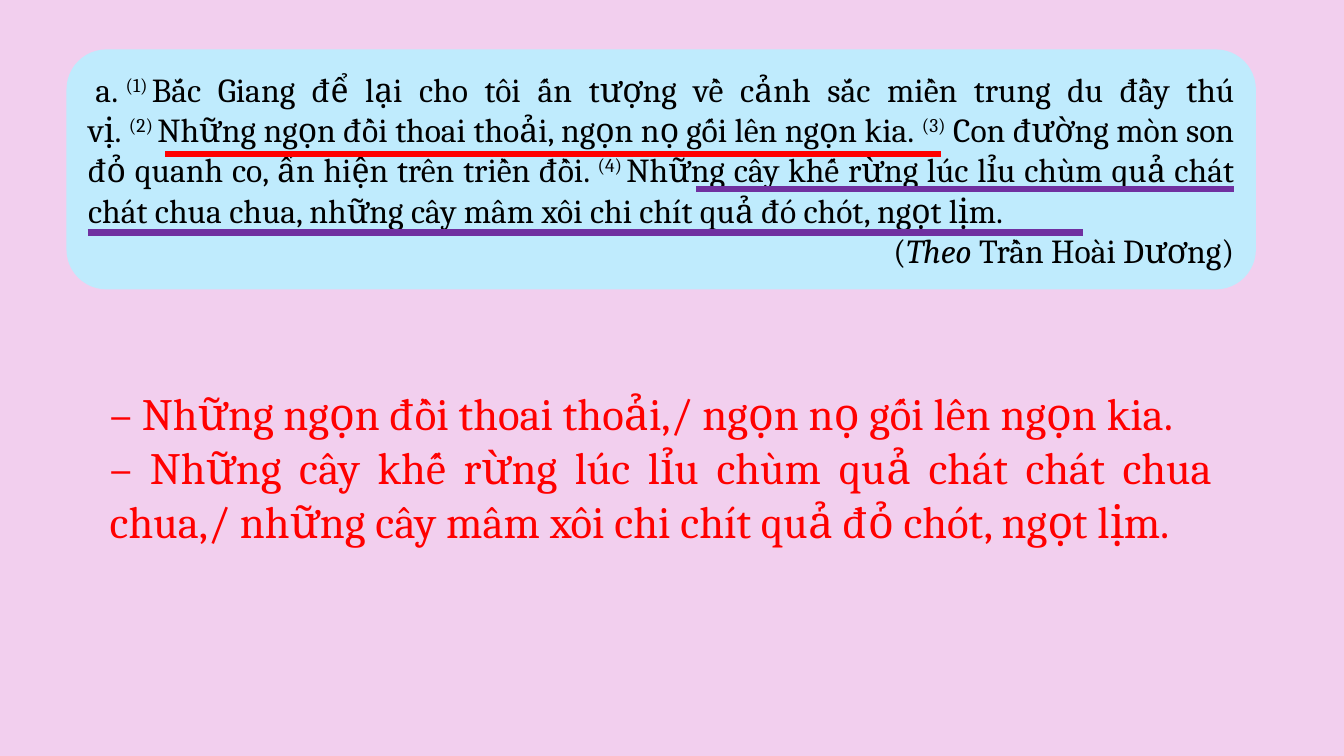
from pptx import Presentation
from pptx.dml.color import RGBColor
from pptx.enum.shapes import MSO_CONNECTOR, MSO_SHAPE
from pptx.enum.text import MSO_ANCHOR, MSO_AUTO_SIZE, PP_ALIGN
from pptx.oxml.ns import qn
from pptx.util import Pt
from lxml import etree

PINK = RGBColor(0xF2, 0xCF, 0xEE)
LIGHT_BLUE = RGBColor(0xBF, 0xEB, 0xFD)
BLACK = RGBColor(0, 0, 0)
RED = RGBColor(0xFF, 0, 0)
PURPLE = RGBColor(0x70, 0x30, 0xA0)

PASSAGE_FORMAT = {"name": "Cambria", "size": Pt(24)}
ANSWER_FORMAT = {"name": "Cambria", "size": Pt(32)}

HARD_SPACE = chr(160)

PASSAGE = [
    (PP_ALIGN.JUSTIFY, [
        (f"{HARD_SPACE}a.{HARD_SPACE}", ""),
        (f"(1){HARD_SPACE}", "superscript"),
        ("Bắc Giang để lại cho tôi ấn tượng về cảnh sắc miền trung du "
         f"đầy thú vị.{HARD_SPACE}", ""),
        (f"(2){HARD_SPACE}", "superscript"),
        (f"Những ngọn đồi thoai thoải, ngọn nọ gối lên ngọn kia.{HARD_SPACE}", ""),
        ("(3)", "superscript"),
        (f"{HARD_SPACE}Con đường mòn son đỏ quanh co, "
         f"ẩn hiện trên triền đồi.{HARD_SPACE}", ""),
        (f"(4){HARD_SPACE}", "superscript"),
        ("Những cây khế rừng lúc lỉu chùm quả chát chát chua chua, "
         "những cây mâm xôi chi chít quả đó chót, ngọt lịm.", ""),
    ]),
    (PP_ALIGN.RIGHT, [
        ("(", ""),
        ("Theo", "italic"),
        (f"{HARD_SPACE}Trần Hoài Dương)", ""),
    ]),
]

ANSWERS = [
    (PP_ALIGN.JUSTIFY, [
        ("– Những ngọn đồi thoai thoải,/ ngọn nọ gối lên ngọn kia.", ""),
    ]),
    (PP_ALIGN.JUSTIFY, [
        ("– Những cây khế rừng lúc lỉu chùm quả chát chát chua chua,/ "
         "những cây mâm xôi chi chít quả đỏ chót, ngọt lịm.", ""),
    ]),
]

UNDERLINES = [
    (118.1, 672.5, 110.2, RED),
    (497.5, 881.3, 135.2, PURPLE),
    (62.6, 773.3, 166.1, PURPLE),
]


def write_paragraphs(text_frame, paragraphs, font_format, color):
    text_frame.word_wrap = True
    for index, (alignment, runs) in enumerate(paragraphs):
        paragraph = text_frame.add_paragraph() if index else text_frame.paragraphs[0]
        paragraph.alignment = alignment
        for text, style in runs:
            run = paragraph.add_run()
            run.text = text
            for attribute, value in font_format.items():
                setattr(run.font, attribute, value)
            run.font.color.rgb = color
            if style == "italic":
                run.font.italic = True
            elif style == "superscript":
                run._r.get_or_add_rPr().set("baseline", "30000")


def add_passage(slide):
    shape = slide.shapes.add_shape(
        MSO_SHAPE.ROUNDED_RECTANGLE, Pt(47.5), Pt(35.3), Pt(849.6), Pt(171.4))
    shape.shadow.inherit = False
    shape.fill.solid()
    shape.fill.fore_color.rgb = LIGHT_BLUE
    shape.line.fill.background()
    shape.text_frame.vertical_anchor = MSO_ANCHOR.MIDDLE
    write_paragraphs(shape.text_frame, PASSAGE, PASSAGE_FORMAT, BLACK)


def add_underline(slide, left, right, top, color):
    connector = slide.shapes.add_connector(
        MSO_CONNECTOR.STRAIGHT, Pt(left), Pt(top), Pt(right), Pt(top))
    connector.line.color.rgb = color
    connector.line.width = Pt(4.5)
    etree.SubElement(connector._element.spPr, qn("a:effectLst"))


def add_answers(slide):
    text_box = slide.shapes.add_textbox(Pt(71.3), Pt(272.2), Pt(802.1), Pt(123.8))
    text_box.text_frame.auto_size = MSO_AUTO_SIZE.SHAPE_TO_FIT_TEXT
    write_paragraphs(text_box.text_frame, ANSWERS, ANSWER_FORMAT, RED)


def main():
    presentation = Presentation()
    presentation.slide_width = Pt(960)
    presentation.slide_height = Pt(540)
    slide = presentation.slides.add_slide(presentation.slide_layouts[6])
    slide.background.fill.solid()
    slide.background.fill.fore_color.rgb = PINK
    add_passage(slide)
    for underline in UNDERLINES:
        add_underline(slide, *underline)
    add_answers(slide)
    presentation.save("out.pptx")


if __name__ == "__main__":
    main()
